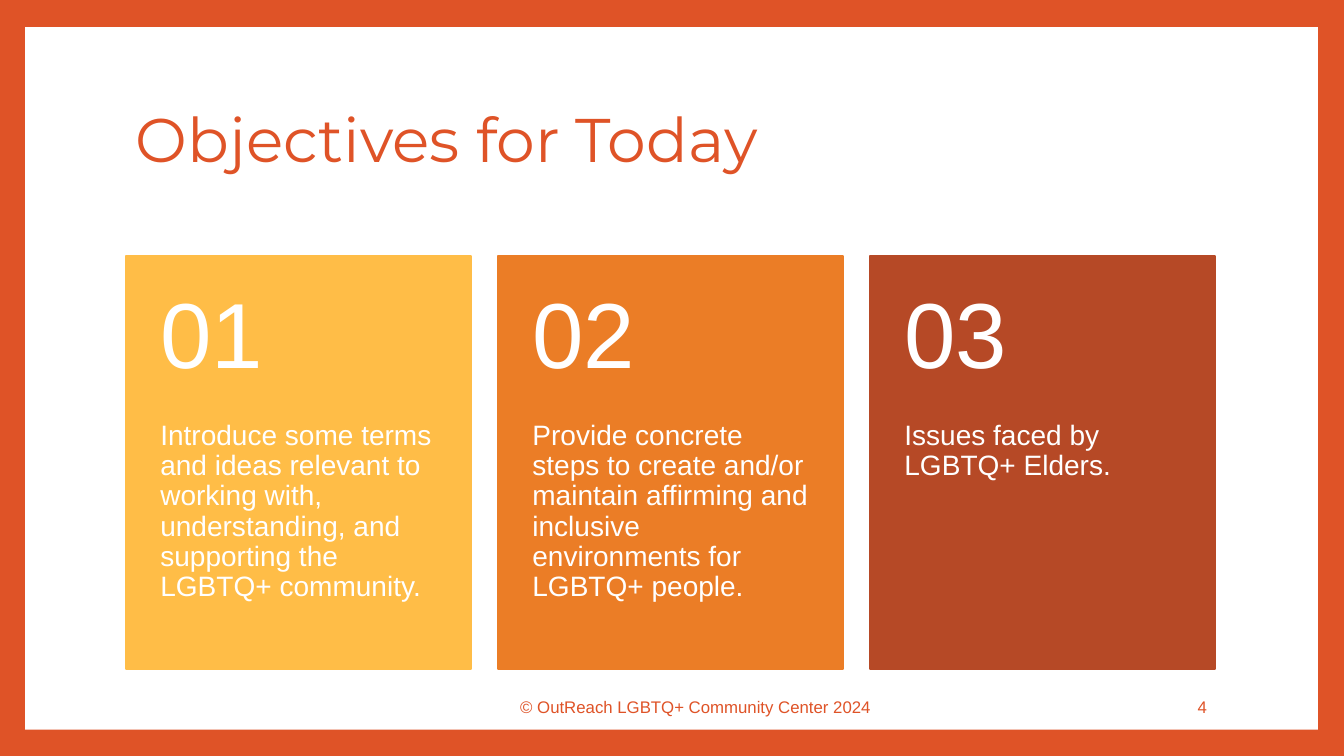
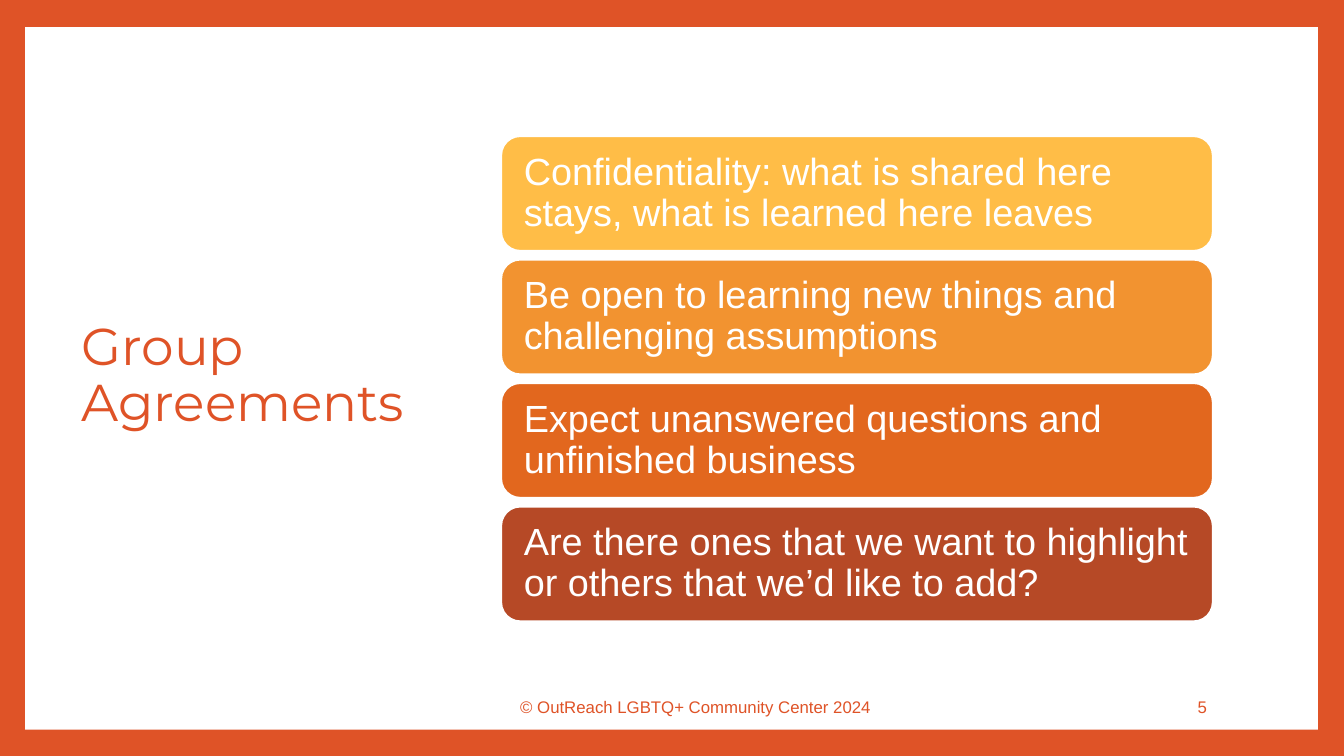
from dataclasses import dataclass

from pptx import Presentation
from pptx.dml.color import RGBColor
from pptx.enum.shapes import MSO_SHAPE as Preset
from pptx.enum.text import MSO_ANCHOR as Anchor, PP_ALIGN as Align
from pptx.presentation import Presentation as Deck
from pptx.slide import Slide
from pptx.util import Inches, Pt


@dataclass(frozen=True)
class Theme:
    brand: str = "DF5327"
    white: str = "FFFFFF"
    amber: str = "FFBD47"
    tangerine: str = "EB7D26"
    apricot: str = "F29330"
    pumpkin: str = "E2671E"
    rust: str = "B64926"
    title_font: str = "Montserrat"
    body_font: str = "Arial"
    title_size: int = 44
    side_title_size: int = 37
    number_size: int = 66
    agreement_size: int = 27
    objective_size: int = 20
    footer_size: int = 12
    outline: float = 1.5
    line_spacing: float = 0.9


@dataclass(frozen=True)
class Area:
    left: float
    top: float
    width: float
    height: float

    def lengths(self) -> tuple[Inches, Inches, Inches, Inches]:
        return Inches(self.left), Inches(self.top), Inches(self.width), Inches(self.height)


@dataclass(frozen=True)
class TextStyle:
    size: int
    color: str
    font: str = "Arial"
    align: Align = Align.LEFT
    anchor: Anchor = Anchor.MIDDLE
    insets: tuple[float, float, float, float] = (0.1, 0.05, 0.1, 0.05)
    line_spacing: float = 1.0


@dataclass(frozen=True)
class Item:
    text: str
    color: str


THEME = Theme()
FOOTER = "© OutReach LGBTQ+ Community Center 2024"

NUMBER_STYLE = TextStyle(
    THEME.number_size, THEME.white, THEME.body_font,
    insets=(0.34, 0.18, 0.34, 0.18), line_spacing=THEME.line_spacing,
)
OBJECTIVE_STYLE = TextStyle(
    THEME.objective_size, THEME.white, THEME.body_font, anchor=Anchor.TOP,
    insets=(0.34, 0, 0.34, 0.36), line_spacing=THEME.line_spacing,
)
AGREEMENT_STYLE = TextStyle(
    THEME.agreement_size, THEME.white, THEME.body_font,
    insets=(0.17, 0.16, 0.17, 0.16), line_spacing=THEME.line_spacing,
)

OBJECTIVES = (
    Item("Introduce some terms and ideas relevant to working with, understanding, "
         "and supporting the LGBTQ+ community.", THEME.amber),
    Item("Provide concrete steps to create and/or maintain affirming and inclusive "
         "environments for LGBTQ+ people.", THEME.tangerine),
    Item("Issues faced by LGBTQ+ Elders.", THEME.rust),
)
AGREEMENTS = (
    Item("Confidentiality: what is shared here stays, what is learned here leaves", THEME.amber),
    Item("Be open to learning new things and challenging assumptions", THEME.apricot),
    Item("Expect unanswered questions and unfinished business", THEME.pumpkin),
    Item("Are there ones that we want to highlight or others that we’d like to add?", THEME.rust),
)


def write_text(shape, text: str, style: TextStyle) -> None:
    frame = shape.text_frame
    frame.word_wrap = True
    frame.vertical_anchor = style.anchor
    left, top, right, bottom = style.insets
    frame.margin_left, frame.margin_top = Inches(left), Inches(top)
    frame.margin_right, frame.margin_bottom = Inches(right), Inches(bottom)
    para = frame.paragraphs[0]
    para.text = text
    para.alignment = style.align
    para.line_spacing = style.line_spacing
    para.font.name = style.font
    para.font.size = Pt(style.size)
    para.font.color.rgb = RGBColor.from_string(style.color)


def add_text(page: Slide, area: Area, text: str, style: TextStyle) -> None:
    write_text(page.shapes.add_textbox(*area.lengths()), text, style)


def add_panel(page: Slide, preset: Preset, area: Area, fill: str, line: str | None = None):
    panel = page.shapes.add_shape(preset, *area.lengths())
    panel.shadow.inherit = False
    panel.fill.solid()
    panel.fill.fore_color.rgb = RGBColor.from_string(fill)
    if line is None:
        panel.line.fill.background()
    else:
        panel.line.color.rgb = RGBColor.from_string(line)
        panel.line.width = Pt(THEME.outline)
    return panel


def add_page(deck: Deck, number: int, title: str, title_area: Area, title_size: int) -> Slide:
    page = deck.slides.add_slide(deck.slide_layouts[6])
    page.background.fill.solid()
    page.background.fill.fore_color.rgb = RGBColor.from_string(THEME.brand)
    add_panel(page, Preset.RECTANGLE, Area(0.25, 0.27, 12.82, 6.97), THEME.white)
    add_text(page, title_area, title, TextStyle(
        title_size, THEME.brand, THEME.title_font, line_spacing=THEME.line_spacing))
    for area, text, align in (
        (Area(4.32, 6.81, 5.16, 0.4), FOOTER, Align.CENTER),
        (Area(10.2, 6.81, 1.87, 0.4), str(number), Align.RIGHT),
    ):
        add_text(page, area, text, TextStyle(
            THEME.footer_size, THEME.brand, THEME.body_font, align))
    return page


def add_objectives(deck: Deck) -> None:
    page = add_page(deck, 4, "Objectives for Today", Area(1.25, 0.67, 10.8, 1.48), THEME.title_size)
    top, width, height, gap, head = 2.54, 3.42, 4.1, 0.27, 1.64
    for index, item in enumerate(OBJECTIVES):
        left = 1.25 + index * (width + gap)
        add_panel(page, Preset.RECTANGLE, Area(left, top, width, height), item.color, item.color)
        add_text(page, Area(left, top + head, width, height - head), item.text, OBJECTIVE_STYLE)
        add_text(page, Area(left, top, width, head), f"{index + 1:02d}", NUMBER_STYLE)


def add_agreements(deck: Deck) -> None:
    page = add_page(deck, 5, "Group Agreements", Area(0.71, 0.67, 3.68, 6.13), THEME.side_title_size)
    height, pitch = 1.14, 1.225
    for index, item in enumerate(AGREEMENTS):
        area = Area(4.97, 1.35 + index * pitch, 7.06, height)
        bar = add_panel(page, Preset.ROUNDED_RECTANGLE, area, item.color, THEME.white)
        write_text(bar, item.text, AGREEMENT_STYLE)


def main() -> None:
    deck = Presentation()
    deck.slide_width, deck.slide_height = Inches(13.33), Inches(7.5)
    add_objectives(deck)
    add_agreements(deck)
    deck.save("out.pptx")


if __name__ == "__main__":
    main()
